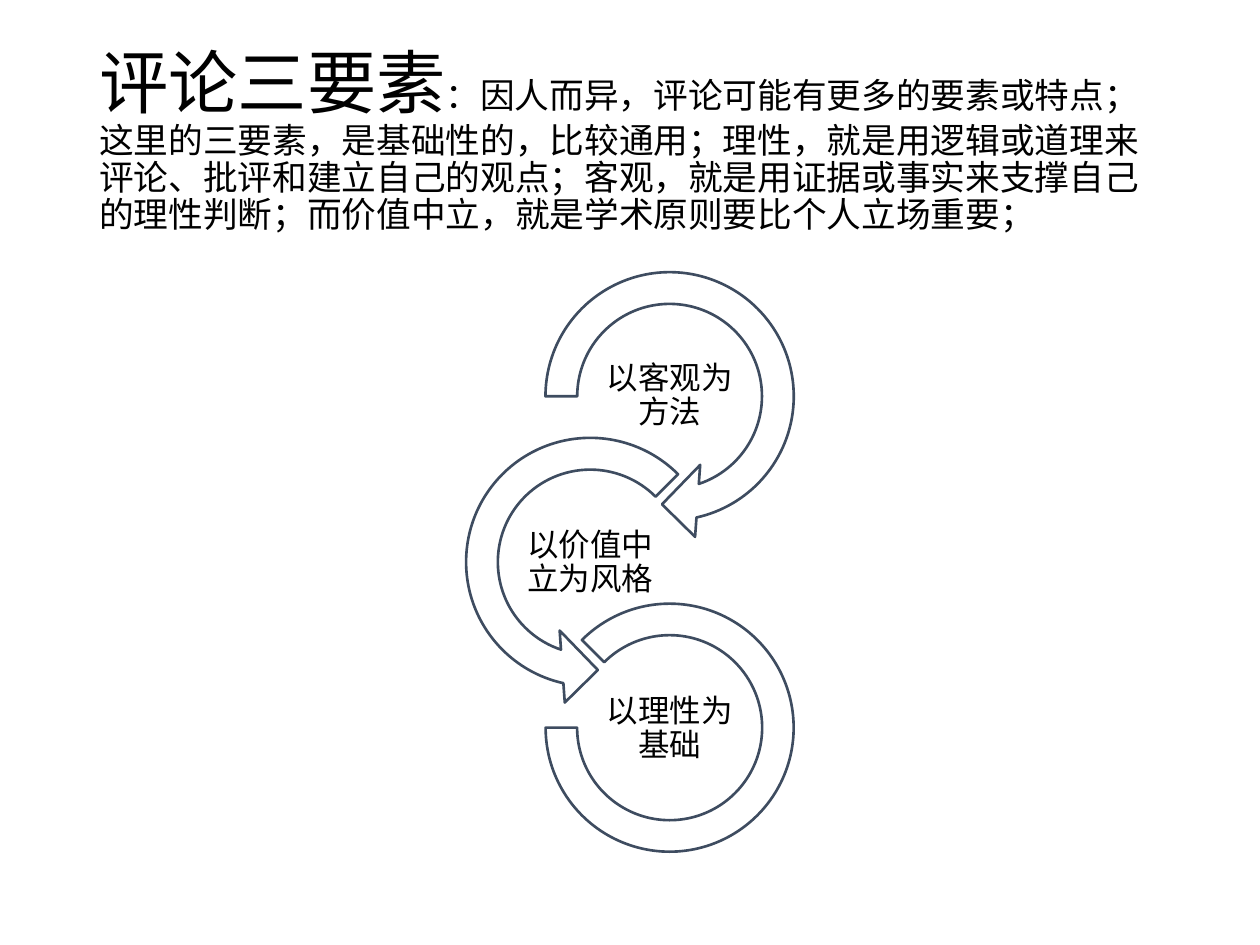
import pptx
import pptx.util
import pptx.dml.color
import pptx.enum.shapes
import pptx.enum.text

Cm, Pt = pptx.util.Cm, pptx.util.Pt
RGB = pptx.dml.color.RGBColor.from_string
Kind = pptx.enum.shapes.MSO_SHAPE
Align = pptx.enum.text.PP_ALIGN
Anchor = pptx.enum.text.MSO_ANCHOR

# Content
HEAD = [
    ("评论三要素", "head"),
    ("：因人而异，评论可能有更多的要素或特点；这里的三要素，是基础性的，比较通用；"
     "理性，就是用逻辑或道理来评论、批评和建立自己的观点；"
     "客观，就是用证据或事实来支撑自己的理性判断；"
     "而价值中立，就是学术原则要比个人立场重要；", "note"),
]
# Label, shape, centre x (cm), diameter (cm), adjustments
RINGS = [
    ("以客观为方法", Kind.CIRCULAR_ARROW, 13.5, 5.82,
     (0.11, 11.42, 45, 108, 0.125)),
    ("以价值中立为风格", Kind.LEFT_CIRCULAR_ARROW, 11.9, 5.82,
     (0.11, 11.42, 63, 189, 0.125)),
    ("以理性为基础", Kind.BLOCK_ARC, 13.5, 5.0, (135, 108, 0.127)),
]

THEME = {
    "font": "Times New Roman",
    "ink": "000000", "fill": "FFFFFF", "line": "3E4C60",
    "head": 39.6, "note": 19.8, "label": 18,
}

# Layout in cm
TOP = 7.99        # centre of the first ring
STEP = 3.34       # from ring to ring
DROP = 3.36       # from label to label
WIDE, HIGH = 3.23, 1.63


def write(slide, runs, box, align=Align.LEFT, pad=(0.25, 0.13)):
    """Add a text box with one paragraph of (text, size name) runs."""
    frame = slide.shapes.add_textbox(*map(Cm, box)).text_frame
    frame.word_wrap = True
    frame.vertical_anchor = Anchor.MIDDLE
    frame.margin_left = frame.margin_right = Cm(pad[0])
    frame.margin_top = frame.margin_bottom = Cm(pad[1])
    para = frame.paragraphs[0]
    para.alignment = align
    para.line_spacing = 0.9
    for text, size in runs:
        run = para.add_run()
        run.text = text
        run.font.name = THEME["font"]
        run.font.size = Pt(THEME[size])
        run.font.color.rgb = RGB(THEME["ink"])


def ring(slide, kind, mid, row, size, adjust):
    """Add an outlined ring around its centre."""
    shape = slide.shapes.add_shape(
        kind, Cm(mid - size / 2), Cm(row - size / 2), Cm(size), Cm(size))
    for i, value in enumerate(adjust):
        shape.adjustments[i] = value
    shape.shadow.inherit = False
    shape.fill.solid()
    shape.fill.fore_color.rgb = RGB(THEME["fill"])
    shape.line.color.rgb = RGB(THEME["line"])
    shape.line.width = Pt(1.5)


def main():
    deck = pptx.Presentation()
    deck.slide_width, deck.slide_height = Cm(25.4), Cm(19.05)
    slide = deck.slides.add_slide(deck.slide_layouts[6])

    # Heading
    write(slide, HEAD, (1.75, 1.02, 21.9, 3.68))

    # Chain of rings with their labels
    for i, (label, kind, mid, size, adjust) in enumerate(RINGS):
        ring(slide, kind, mid, TOP + i * STEP, size, adjust)
        box = (mid - WIDE / 2, TOP + i * DROP - HIGH / 2, WIDE, HIGH)
        write(slide, [(label, "label")], box,
              align=Align.CENTER, pad=(0.03, 0.03))

    deck.save("out.pptx")


if __name__ == "__main__":
    main()
